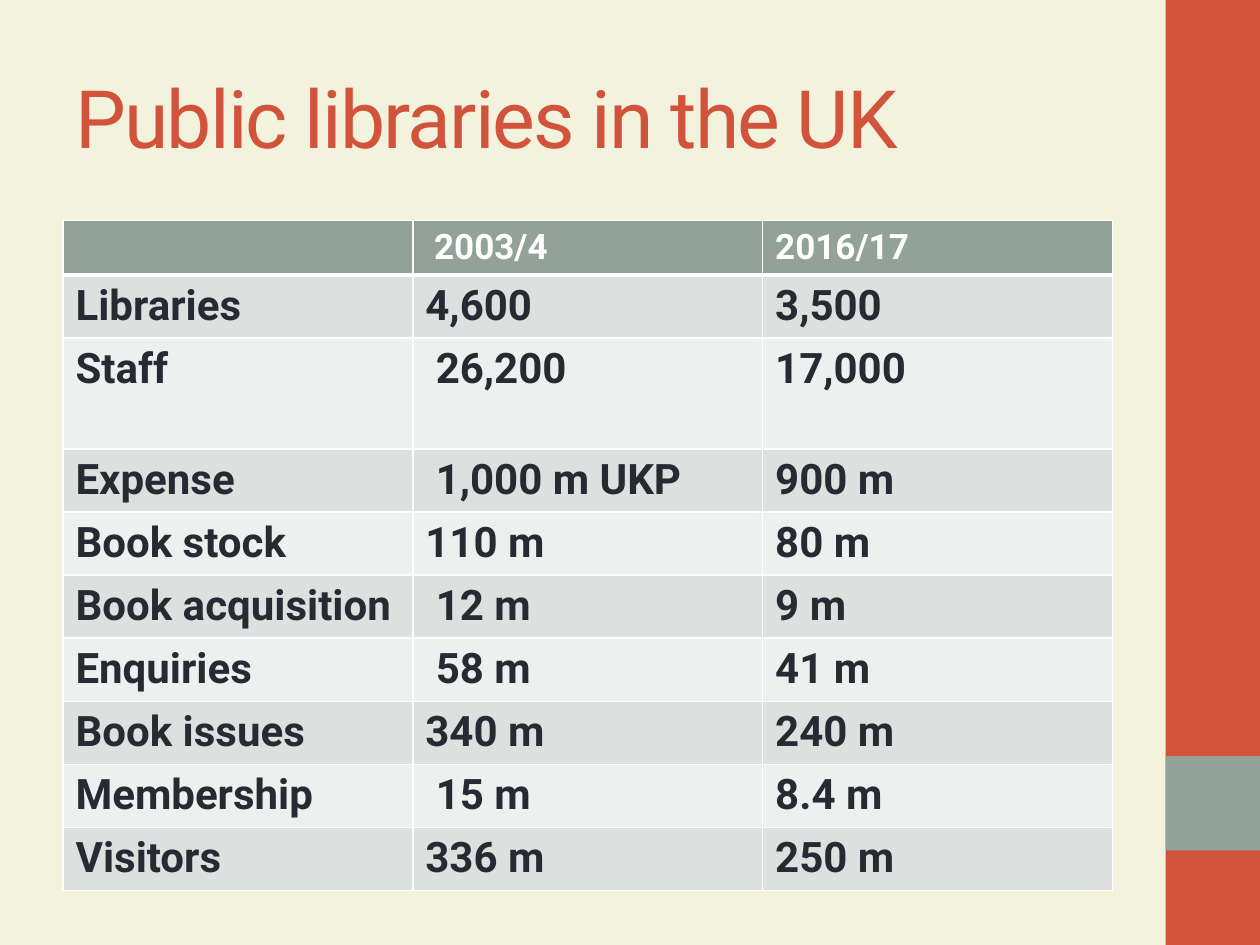
from lxml.etree import SubElement
from pptx import Presentation
from pptx.dml.color import RGBColor
from pptx.enum.shapes import MSO_SHAPE as Preset
from pptx.enum.text import MSO_ANCHOR as Anchor
from pptx.oxml.ns import qn
from pptx.util import Inches, Pt

WIDTH, HEIGHT = 10, 7.5
UNIT = WIDTH * 0.075  # side of the square accent in the sidebar
LEFT, CONTENT_WIDTH = WIDTH * 0.05, 8.33
FONT = "Roboto"
COLORS = {
    "background": "F3F2DC",
    "accent": "D2533C",
    "sage": "93A299",
    "band_dark": "DCE0DE",
    "band_light": "EEF0EF",
    "text": "292934",
    "white": "FFFFFF",
}
HEADER_HEIGHT, ROW_HEIGHT, STAFF_HEIGHT = 0.42, 0.49, 0.88
ROWS = [
    ("", " 2003/4", "2016/17"),
    ("Libraries", "4,600", "3,500"),
    ("Staff", " 26,200", "17,000"),
    ("Expense", " 1,000 m UKP", "900 m"),
    ("Book stock", "110 m", "80 m"),
    ("Book acquisition", " 12 m", "9 m"),
    ("Enquiries", " 58 m", "41 m"),
    ("Book issues", "340 m", "240 m"),
    ("Membership", " 15 m", "8.4 m"),
    ("Visitors", "336 m", "250 m"),
]


def paint(fill, color):
    fill.solid()
    fill.fore_color.rgb = RGBColor.from_string(COLORS[color])


def add_run(paragraph, text, size, color, bold=False):
    run = paragraph.add_run()
    run.text = text
    run.font.name = FONT
    run.font.size = Pt(size)
    run.font.bold = bold
    run.font.color.rgb = RGBColor.from_string(COLORS[color])
    return run


def add_block(slide, top, height, color):
    """Add a rectangle of the sidebar at the right edge."""
    shape = slide.shapes.add_shape(
        Preset.RECTANGLE, Inches(WIDTH - UNIT), Inches(top), Inches(UNIT), Inches(height)
    )
    shape.shadow.inherit = False
    paint(shape.fill, color)
    shape.line.fill.background()


def add_title(slide, text):
    box = slide.shapes.add_textbox(
        Inches(LEFT), Inches(HEIGHT * 0.04), Inches(CONTENT_WIDTH), Inches(1.25)
    )
    frame = box.text_frame
    frame.word_wrap = True
    frame.vertical_anchor = Anchor.MIDDLE
    run = add_run(frame.paragraphs[0], text, 46, "accent")
    run.font._element.set("spc", "-100")


def set_borders(cell, widths):
    properties = cell._tc.get_or_add_tcPr()
    for side, width in widths.items():
        line = SubElement(properties, qn(f"a:ln{side}"), w=str(Pt(width)))
        fill = SubElement(line, qn("a:solidFill"))
        SubElement(fill, qn("a:srgbClr"), val=COLORS["white"])


def row_style(index):
    """Return height, fill, text size and text colour of a row."""
    if index == 0:
        return HEADER_HEIGHT, "sage", 20, "white"
    height = STAFF_HEIGHT if ROWS[index][0] == "Staff" else ROW_HEIGHT
    return height, "band_dark" if index % 2 else "band_light", 24, "text"


def add_statistics(slide):
    heights = [row_style(index)[0] for index in range(len(ROWS))]
    table = slide.shapes.add_table(
        len(ROWS), len(ROWS[0]), Inches(LEFT), Inches(1.75),
        Inches(CONTENT_WIDTH), Inches(sum(heights)),
    ).table
    for r, values in enumerate(ROWS):
        height, fill, size, color = row_style(r)
        table.rows[r].height = Inches(height)
        # The line under the header is heavier than the others
        widths = {"L": 1, "R": 1, "T": 3 if r == 1 else 1, "B": 3 if r == 0 else 1}
        for c, value in enumerate(values):
            cell = table.cell(r, c)
            set_borders(cell, widths)
            paint(cell.fill, fill)
            if value:
                add_run(cell.text_frame.paragraphs[0], value, size, color, bold=True)


def main():
    presentation = Presentation()
    presentation.slide_width, presentation.slide_height = Inches(WIDTH), Inches(HEIGHT)
    slide = presentation.slides.add_slide(presentation.slide_layouts[6])
    paint(slide.background.fill, "background")

    # Sidebar
    add_block(slide, 0, HEIGHT, "accent")
    add_block(slide, HEIGHT - 2 * UNIT, UNIT, "sage")

    # Content
    add_title(slide, "Public libraries in the UK")
    add_statistics(slide)
    presentation.save("out.pptx")


if __name__ == "__main__":
    main()
